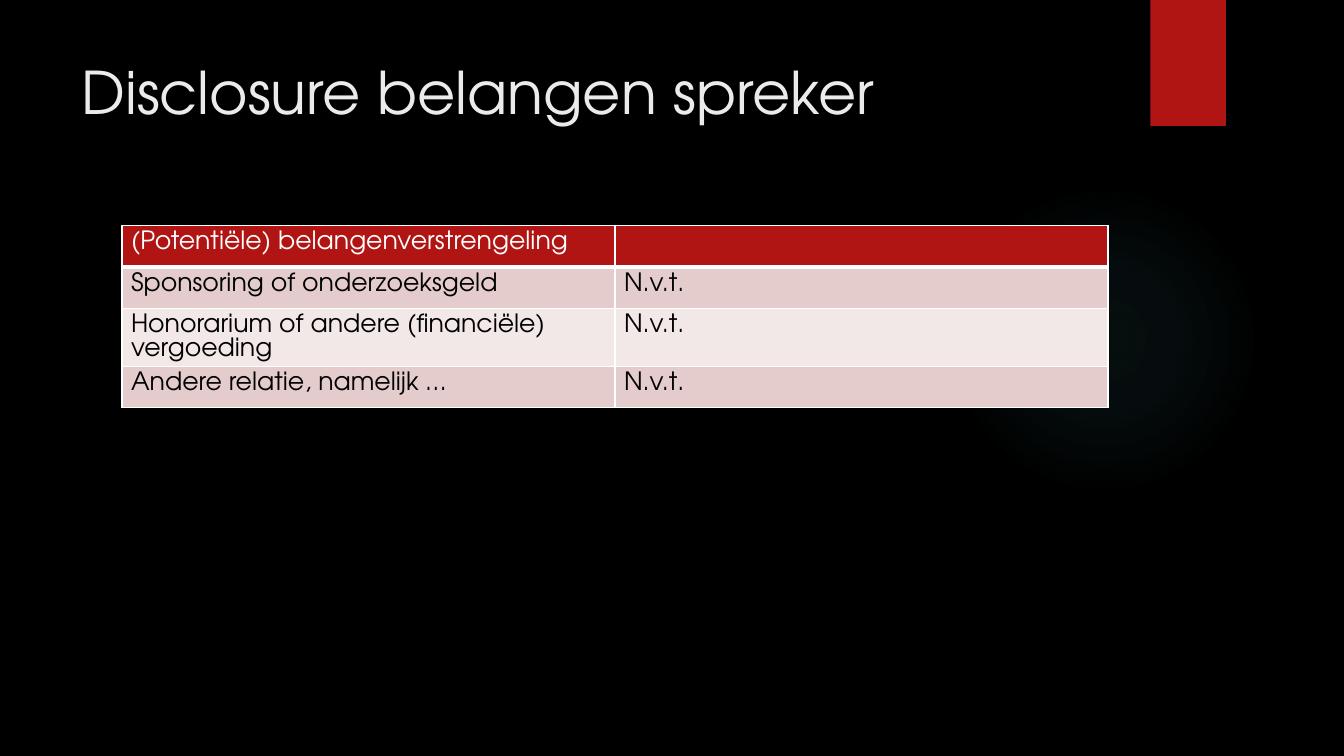
import pptx
import pptx.dml.color
import pptx.enum.shapes
import pptx.oxml
import pptx.oxml.ns
import pptx.util
from pptx.util import Inches

FONT = "TeX Gyre Adventor"
COLORS = {
    "background": "000000",
    "title": "EBEBEB",
    "red": "B01513",
    "glow": "50B9C1",
    "white": "FFFFFF",
    "black": "000000",
    "band_dark": "E4CCCC",
    "band_light": "F2E8E7",
}
ROWS = [
    ("(Potentiële) belangenverstrengeling", ""),
    ("Sponsoring of onderzoeksgeld", "N.v.t."),
    ("Honorarium of andere (financiële) vergoeding", "N.v.t."),
    ("Andere relatie, namelijk …", "N.v.t."),
]
GLOW_STOPS = [(0, 7), (36, 6), (69, 0)]
NS = pptx.oxml.ns.nsdecls("a")


def rgb(name):
    return pptx.dml.color.RGBColor.from_string(COLORS[name])


def set_fill(obj, color):
    obj.fill.solid()
    obj.fill.fore_color.rgb = rgb(color)


def style_text(p, size, color):
    for key, value in {"name": FONT, "size": pptx.util.Pt(size)}.items():
        setattr(p.font, key, value)
    p.font.color.rgb = rgb(color)


def add_plain_shape(s, kind, x, y, w, h):
    sp = s.shapes.add_shape(kind, Inches(x), Inches(y), Inches(w), Inches(h))
    sp.shadow.inherit = False
    sp.line.fill.background()
    return sp


def add_glow(s, x, y, size):
    """Add a circle that fades out from its centre."""
    sp = add_plain_shape(s, pptx.enum.shapes.MSO_SHAPE.OVAL, x, y, size, size)
    stops = "".join(
        f'<a:gs pos="{pos * 1000}"><a:srgbClr val="{COLORS["glow"]}">'
        f'<a:alpha val="{alpha * 1000}"/></a:srgbClr></a:gs>'
        for pos, alpha in GLOW_STOPS
    )
    gradient = pptx.oxml.parse_xml(
        f'<a:gradFill {NS} rotWithShape="1"><a:gsLst>{stops}</a:gsLst>'
        '<a:path path="circle"><a:fillToRect l="50000" t="50000" r="50000" b="50000"/>'
        "</a:path></a:gradFill>"
    )
    sp.fill.background()
    spPr = sp.element.spPr
    spPr.replace(spPr.find(pptx.oxml.ns.qn("a:noFill")), gradient)


def add_title(s, text, x, y, w, h):
    sp = s.shapes.add_textbox(Inches(x), Inches(y), Inches(w), Inches(h))
    tf = sp.text_frame
    tf.word_wrap = True
    p = tf.paragraphs[0]
    p.text = text
    style_text(p, 42, "title")


def set_borders(cell, bottom):
    tcPr = cell._tc.get_or_add_tcPr()
    widths = {"lnL": 1, "lnR": 1, "lnT": 1, "lnB": bottom}
    for i, (side, width) in enumerate(widths.items()):
        tcPr.insert(i, pptx.oxml.parse_xml(
            f'<a:{side} {NS} w="{width * 12700}"><a:solidFill>'
            f'<a:srgbClr val="{COLORS["white"]}"/></a:solidFill></a:{side}>'
        ))


def add_disclosure_table(s, x, y, col_width, row_height):
    rows, cols = len(ROWS), len(ROWS[0])
    frame = s.shapes.add_table(rows, cols, Inches(x), Inches(y),
                               Inches(col_width * cols), Inches(row_height * rows))
    table = frame.table
    for col in table.columns:
        col.width = Inches(col_width)
    for i, texts in enumerate(ROWS):
        table.rows[i].height = Inches(row_height)
        header = i == 0
        fill = "red" if header else "band_dark" if i % 2 else "band_light"
        for j, text in enumerate(texts):
            cell = table.cell(i, j)
            set_fill(cell, fill)
            set_borders(cell, 3 if header else 1)
            for side in ("left", "right"):
                setattr(cell, f"margin_{side}", Inches(0.09))
            p = cell.text_frame.paragraphs[0]
            p.text = text
            p.line_spacing = pptx.util.Pt(17)
            style_text(p, 18, "white" if header else "black")
            p.font.bold = False


def main():
    prs = pptx.Presentation()
    prs.slide_width, prs.slide_height = Inches(13.33), Inches(7.5)
    s = prs.slides.add_slide(prs.slide_layouts[6])
    set_fill(s.background, "background")
    add_glow(s, 9.41, 1.83, 3.08)
    ribbon = add_plain_shape(s, pptx.enum.shapes.MSO_SHAPE.RECTANGLE, 11.41, 0, 0.75, 1.25)
    set_fill(ribbon, "red")
    add_title(s, "Disclosure belangen spreker", 0.71, 0.5, 10.29, 1.53)
    add_disclosure_table(s, 1.21, 2.24, 4.89, 0.41)
    prs.save("out.pptx")


if __name__ == "__main__":
    main()
